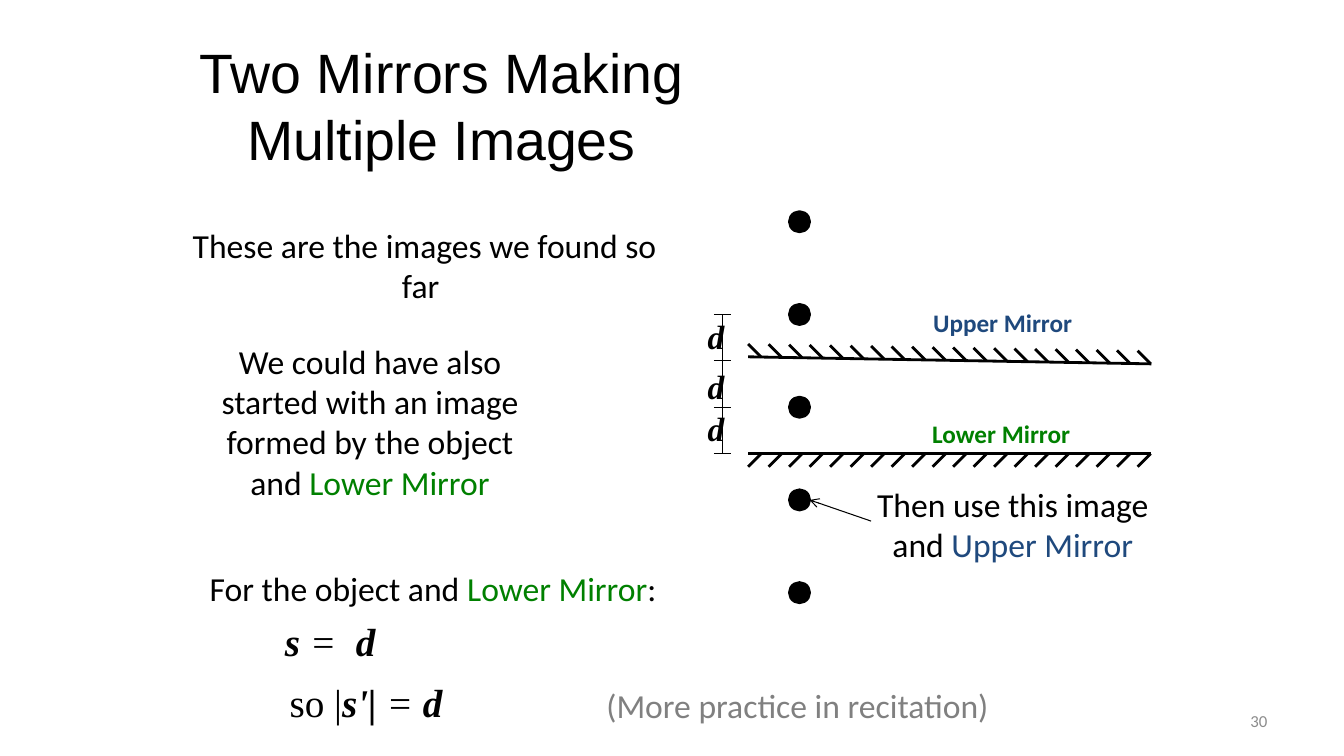
from lxml.etree import SubElement
from pptx import Presentation
from pptx.dml.color import RGBColor
from pptx.enum.shapes import MSO_CONNECTOR as Connector, MSO_SHAPE as Shape
from pptx.enum.text import MSO_ANCHOR as Anchor, MSO_AUTO_SIZE as AutoSize, PP_ALIGN as Align
from pptx.oxml.ns import qn
from pptx.util import Inches, Pt

BLACK, GREEN, BLUE = "000000", "008000", "1F497D"
GREY, PALE_GREY = "808080", "8C8C8C"
SERIF = "Times New Roman"

MIRROR_LEFT, MIRROR_RIGHT = 7.42, 11.42
HATCH_COUNT, HATCH_STEP, HATCH_SIZE = 20, 0.2033, 0.13
SCALE_X, TICK_LEFT, TICK_RIGHT = 7.17, 7.08, 7.25
DOT_LEFT, DOT_TOP, DOT_SIZE, DOT_STEP = 7.83, 2.1, 0.2, 0.92


def color(hex_string):
    return RGBColor.from_string(hex_string)


def write(frame, *parts, size=24, font="Calibri", ink=BLACK, bold=False, italic=False,
          align=Align.CENTER, anchor=Anchor.TOP):
    """Fill a text frame; a part is a string or a (string, run format) pair."""
    frame.word_wrap = True
    frame.auto_size = AutoSize.NONE
    frame.vertical_anchor = anchor
    paragraph = frame.paragraphs[0]
    paragraph.alignment = align
    for part in parts:
        words, own = (part, {}) if isinstance(part, str) else part
        run = paragraph.add_run()
        run.text = words
        run.font.size = Pt(size)
        run.font.name = font
        run.font.bold = own.get("bold", bold)
        run.font.italic = own.get("italic", italic)
        run.font.color.rgb = color(own.get("ink", ink))


def add_text(shapes, box, *parts, **text_format):
    label = shapes.add_textbox(*map(Inches, box))
    write(label.text_frame, *parts, **text_format)


def add_line(shapes, start, end, width=0.75, arrow=False):
    line = shapes.add_connector(Connector.STRAIGHT, *map(Inches, (*start, *end)))
    line.line.color.rgb = color(BLACK)
    line.line.width = Pt(width)
    if arrow:
        SubElement(line.line._get_or_add_ln(), qn("a:tailEnd"), type="arrow")
    SubElement(line._element.spPr, qn("a:effectLst"))


def add_mirror(shapes, left_y, right_y, hatch_rise):
    """Draw a mirror surface with hatching on its back side."""
    mirror = shapes.add_group_shape().shapes
    slope = (right_y - left_y) / (MIRROR_RIGHT - MIRROR_LEFT)
    add_line(mirror, (MIRROR_RIGHT, right_y), (MIRROR_LEFT, left_y), width=2)
    for index in range(HATCH_COUNT):
        x = MIRROR_LEFT + HATCH_SIZE + index * HATCH_STEP
        y = left_y + slope * (x - MIRROR_LEFT)
        add_line(mirror, (x, y), (x - HATCH_SIZE, y + hatch_rise), width=2)


def add_distance_scale(shapes):
    add_line(shapes, (SCALE_X, 3.12), (SCALE_X, 4.5))
    for y in (3.12, 3.58, 4.04, 4.5):
        add_line(shapes, (TICK_LEFT, y), (TICK_RIGHT, y))
    for top in (3.08, 3.58, 4):
        add_text(shapes, (6.92, top, 0.25, 0.51), "d", font=SERIF, bold=True, italic=True)


def add_dot(shapes, top):
    dot = shapes.add_shape(Shape.OVAL, *map(Inches, (DOT_LEFT, top, DOT_SIZE, DOT_SIZE)))
    dot.shadow.inherit = False
    dot.fill.solid()
    dot.fill.fore_color.rgb = color(BLACK)
    dot.line.color.rgb = color(BLACK)
    dot.line.width = Pt(2)


def add_title(shapes, box, words):
    title = shapes.title
    title.left, title.top, title.width, title.height = map(Inches, box)
    write(title.text_frame, words, size=39.6, font="Arial", anchor=Anchor.MIDDLE)


def add_explanations(shapes):
    lower = ("Lower Mirror", {"ink": GREEN})
    add_text(shapes, (1.67, 2.18, 5.08, 0.91), "These are the images we found so far ")
    add_text(shapes, (1.92, 3.33, 3.5, 1.72),
             "We could have also started with an image formed by the object and ", lower)
    add_text(shapes, (1.67, 5.58, 5.25, 0.51), "For the object and ", lower, ":")
    add_text(shapes, (5.37, 6.75, 5.08, 0.5), "(More practice in recitation)", ink=GREY)


def add_equations(shapes):
    upright = {"bold": False, "italic": False}
    light = {"bold": False}
    equation = {"size": 28, "font": SERIF, "bold": True, "italic": True}
    add_text(shapes, (2.58, 6.08, 1.39, 0.57), "s ", ("=  ", light), "d", **equation)
    add_text(shapes, (2.67, 6.68, 1.92, 0.57),
             ("so |", upright), "s'| ", ("= ", light), "d", **equation)


def add_next_step(shapes):
    hint = shapes.add_group_shape().shapes
    add_text(hint, (8.42, 4.75, 3.25, 0.91),
             "Then use this image and ", ("Upper Mirror", {"ink": BLUE}))
    add_line(hint, (8.64, 5.17), (8.03, 4.96), arrow=True)


def main():
    deck = Presentation()
    deck.slide_width, deck.slide_height = Inches(13.33), Inches(7.5)
    shapes = deck.slides.add_slide(deck.slide_layouts[5]).shapes

    add_title(shapes, (1.67, 0, 5.42, 2.08), "Two Mirrors Making Multiple Images")
    add_explanations(shapes)
    add_equations(shapes)

    add_mirror(shapes, 4.5, 4.5, HATCH_SIZE)
    add_mirror(shapes, 3.54, 3.61, -HATCH_SIZE)
    add_text(shapes, (8.97, 4.1, 1.92, 0.4), "Lower Mirror", size=18, ink=GREEN, bold=True)
    add_text(shapes, (9.04, 3, 1.81, 0.4), "Upper Mirror", size=18, ink=BLUE, bold=True)
    add_distance_scale(shapes)
    for index in range(5):
        add_dot(shapes, DOT_TOP + index * DOT_STEP)
    add_next_step(shapes)

    add_text(shapes, (9.56, 6.95, 3.11, 0.4), "30", size=12, ink=PALE_GREY,
             align=Align.RIGHT, anchor=Anchor.MIDDLE)
    deck.save("out.pptx")


if __name__ == "__main__":
    main()
